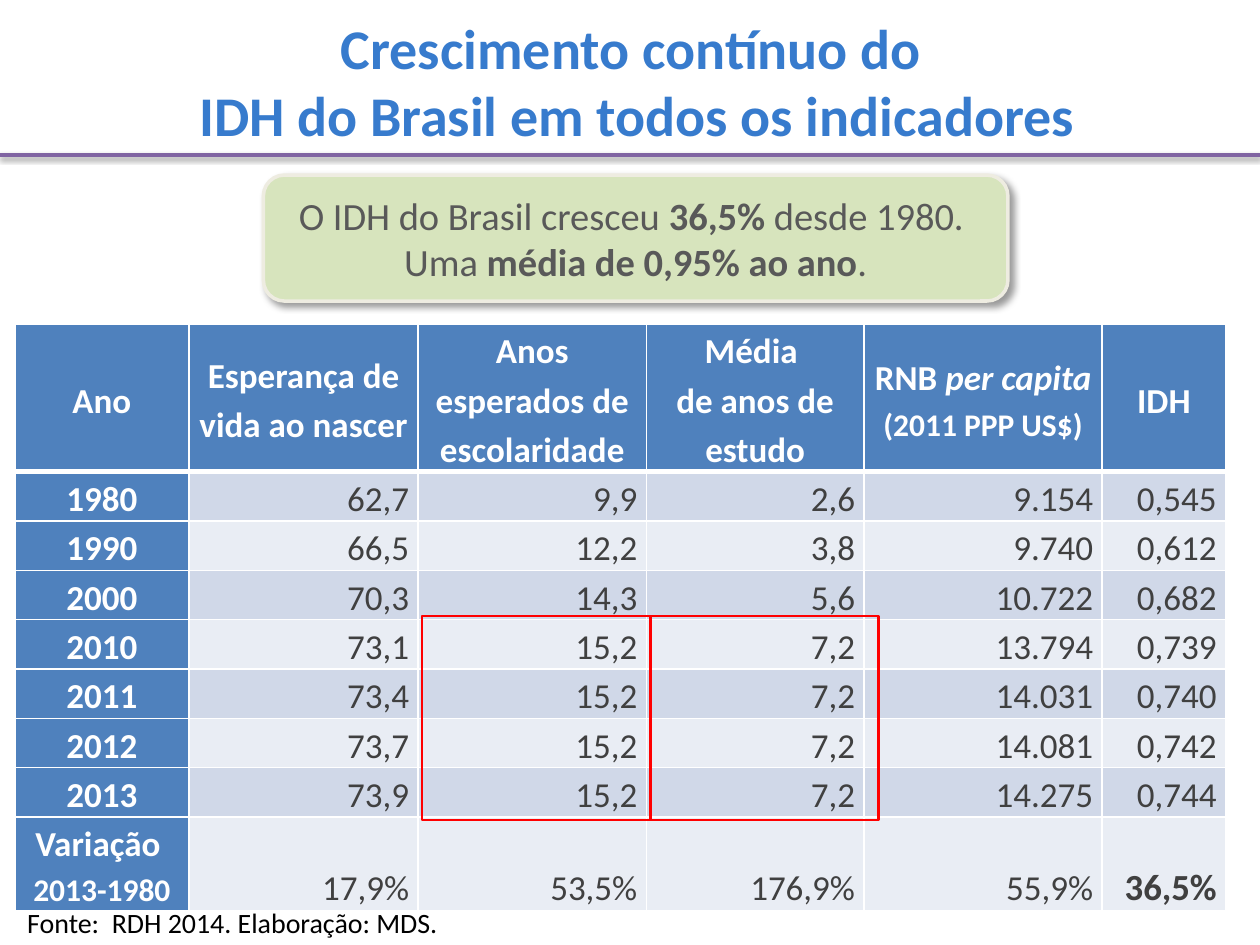
from dataclasses import dataclass

from lxml import etree
from pptx import Presentation
from pptx import util as u
from pptx.dml.color import RGBColor
from pptx.enum import shapes, text
from pptx.oxml.ns import qn

FONT = "Calibri"
WHITE, HEADER_BLUE, BODY_GRAY = "FFFFFF", "4F81BD", "404040"
BANDS = ("D0D8E8", "E9EDF4")
ALIGN, ANCHOR = text.PP_ALIGN, text.MSO_ANCHOR


@dataclass
class Span:
    text: str
    bold: bool = False
    italic: bool = False
    size: float | None = None


@dataclass
class Style:
    size: float
    color: str
    bold: bool = False
    align: ALIGN = ALIGN.CENTER
    spacing: float | None = None


@dataclass
class Area:
    left: float
    top: float
    width: float
    height: float

    def lengths(self) -> list[u.Cm]:
        return [u.Cm(n) for n in (self.left, self.top, self.width, self.height)]


HEADER_STYLE = Style(20, WHITE, True, spacing=1.15)
VALUE_STYLE = Style(20, BODY_GRAY, align=ALIGN.RIGHT, spacing=1.15)

COLUMN_WIDTHS = (3.51, 4.62, 4.6, 4.39, 4.8, 2.49)
ROW_HEIGHTS = (2.92, *[0.975] * 7, 1.83)
HEADERS = (
    [["Ano"]],
    [["Esperança de vida ao nascer"]],
    [["Anos esperados de escolaridade"]],
    [["Média "], ["de anos de estudo"]],
    [["RNB ", Span("per capita ", italic=True)], [Span("(2011 PPP US$)", size=18)]],
    [["IDH"]],
)
ROWS = (
    ("1980", "62,7", "9,9", "2,6", "9.154", "0,545"),
    ("1990", "66,5", "12,2", "3,8", "9.740", "0,612"),
    ("2000", "70,3", "14,3", "5,6", "10.722", "0,682"),
    ("2010", "73,1", "15,2", "7,2", "13.794", "0,739"),
    ("2011", "73,4", "15,2", "7,2", "14.031", "0,740"),
    ("2012", "73,7", "15,2", "7,2", "14.081", "0,742"),
    ("2013", "73,9", "15,2", "7,2", "14.275", "0,744"),
)
CHANGE_LABEL = [["Variação "], [Span("2013-1980", size=18)]]
CHANGES = ("17,9%", "53,5%", "176,9%", "55,9%", Span("36,5%", bold=True, size=21))


def rgb(color: str) -> RGBColor:
    return RGBColor.from_string(color)


def write(frame, lines: list, style: Style) -> None:
    """Fill a frame with one paragraph per line; a line lists strings or spans."""
    frame.text = "\n".join("" for _ in lines)
    for para, line in zip(frame.paragraphs, lines):
        para.alignment = style.align
        if style.spacing:
            para.line_spacing = style.spacing
        for part in line:
            span = part if isinstance(part, Span) else Span(part)
            run = para.add_run()
            run.text = span.text
            run.font.name = FONT
            run.font.size = u.Pt(span.size or style.size)
            run.font.bold = style.bold or span.bold
            run.font.italic = span.italic
            run.font.color.rgb = rgb(style.color)


def add_color(parent, color: str, alpha: int = 100) -> None:
    fill = parent if parent.tag == qn("a:outerShdw") else etree.SubElement(parent, qn("a:solidFill"))
    node = etree.SubElement(fill, qn("a:srgbClr"), val=color)
    if alpha < 100:
        etree.SubElement(node, qn("a:alpha"), val=str(alpha * 1000))


def add_shadow(shape, alpha: int, blur: float, distance: float, angle: int) -> None:
    effects = etree.SubElement(shape.element.spPr, qn("a:effectLst"))
    shadow = etree.SubElement(
        effects, qn("a:outerShdw"), blurRad=str(u.Pt(blur)), dist=str(u.Pt(distance)),
        dir=str(angle * 60000), algn="tl", rotWithShape="0")
    add_color(shadow, "000000", alpha)


def set_borders(cell, top: float, bottom: float) -> None:
    """White borders, which must come before the fill in the cell properties."""
    properties = cell._tc.get_or_add_tcPr()
    widths = {"a:lnL": 1, "a:lnR": 1, "a:lnT": top, "a:lnB": bottom}
    for position, (tag, width) in enumerate(widths.items()):
        line = etree.Element(qn(tag), w=str(u.Pt(width)))
        add_color(line, WHITE)
        properties.insert(position, line)


def fill_cell(cell, lines: list, row: int, is_header: bool) -> None:
    cell.margin_left = cell.margin_right = u.Cm(0.18)
    cell.margin_top = cell.margin_bottom = 0
    cell.vertical_anchor = ANCHOR.MIDDLE if is_header else ANCHOR.BOTTOM
    cell.fill.solid()
    cell.fill.fore_color.rgb = rgb(HEADER_BLUE if is_header else BANDS[(row - 1) % 2])
    set_borders(cell, top=3 if row == 1 else 1, bottom=3 if row == 0 else 1)
    write(cell.text_frame, lines, HEADER_STYLE if is_header else VALUE_STYLE)


def add_indicator_table(slide) -> None:
    content = [HEADERS, *[[[[value]] for value in row] for row in ROWS],
               [CHANGE_LABEL, *[[[value]] for value in CHANGES]]]
    area = Area(0.3, 6.53, sum(COLUMN_WIDTHS), sum(ROW_HEIGHTS))
    table = slide.shapes.add_table(len(content), len(HEADERS), *area.lengths()).table
    for column, width in zip(table.columns, COLUMN_WIDTHS):
        column.width = u.Cm(width)
    for index, (row, height) in enumerate(zip(table.rows, ROW_HEIGHTS)):
        row.height = u.Cm(height)
        for position, lines in enumerate(content[index]):
            fill_cell(table.cell(index, position), lines, index, index == 0 or position == 0)


def add_box(slide, kind, area: Area, line: str, width: float, fill: str | None = None):
    box = slide.shapes.add_shape(kind, *area.lengths())
    if fill:
        box.fill.solid()
        box.fill.fore_color.rgb = rgb(fill)
    else:
        box.fill.background()
    box.line.color.rgb = rgb(line)
    box.line.width = u.Pt(width)
    return box


def add_title(slide) -> None:
    rule = slide.shapes.add_connector(
        shapes.MSO_CONNECTOR.STRAIGHT, 0, u.Cm(3.12), u.Cm(25.4), u.Cm(3.12))
    rule.line.color.rgb = rgb("8064A2")
    rule.line.width = u.Pt(2)
    add_shadow(rule, 38, 3.1, 1.6, 90)

    title = slide.shapes.title
    title.left, title.top, title.width, title.height = Area(0.3, 0.13, 25.1, 3).lengths()
    title.text_frame.auto_size = text.MSO_AUTO_SIZE.NONE
    write(title.text_frame, [["Crescimento contínuo do "],
                             ["IDH do Brasil em todos os indicadores"]],
          Style(32, "377BCD", True))


def add_callout(slide) -> None:
    callout = add_box(slide, shapes.MSO_SHAPE.ROUNDED_RECTANGLE,
                      Area(5.31, 3.53, 15.01, 2.54), "EEECE1", 2, "D7E4BD")
    add_shadow(callout, 40, 4, 3, 45)
    frame = callout.text_frame
    frame.vertical_anchor = ANCHOR.MIDDLE
    write(frame, [["O IDH do Brasil cresceu ", Span("36,5% ", True), "desde 1980. "],
                  ["Uma ", Span("média de 0,95% ao ano", True), "."]],
          Style(22, "595959"))
    frame.paragraphs[-1].space_after = u.Pt(12)


def main() -> None:
    deck = Presentation()
    deck.slide_width, deck.slide_height = u.Cm(25.4), u.Cm(19.05)
    slide = deck.slides.add_slide(deck.slide_layouts[5])
    add_title(slide)
    add_indicator_table(slide)
    for column in range(2):
        frame = add_box(slide, shapes.MSO_SHAPE.RECTANGLE,
                        Area(8.51 + 4.6 * column, 12.42, 4.6, 4.11), "FF0000", 1.5)
        frame.shadow.inherit = False
    add_callout(slide)
    source = slide.shapes.add_textbox(*Area(0.3, 18.14, 8.89, 0.94).lengths())
    source.text_frame.word_wrap = False
    write(source.text_frame, [["Fonte:  RDH 2014. Elaboração: MDS."]],
          Style(16, "000000", align=ALIGN.LEFT))
    deck.save("out.pptx")


if __name__ == "__main__":
    main()
